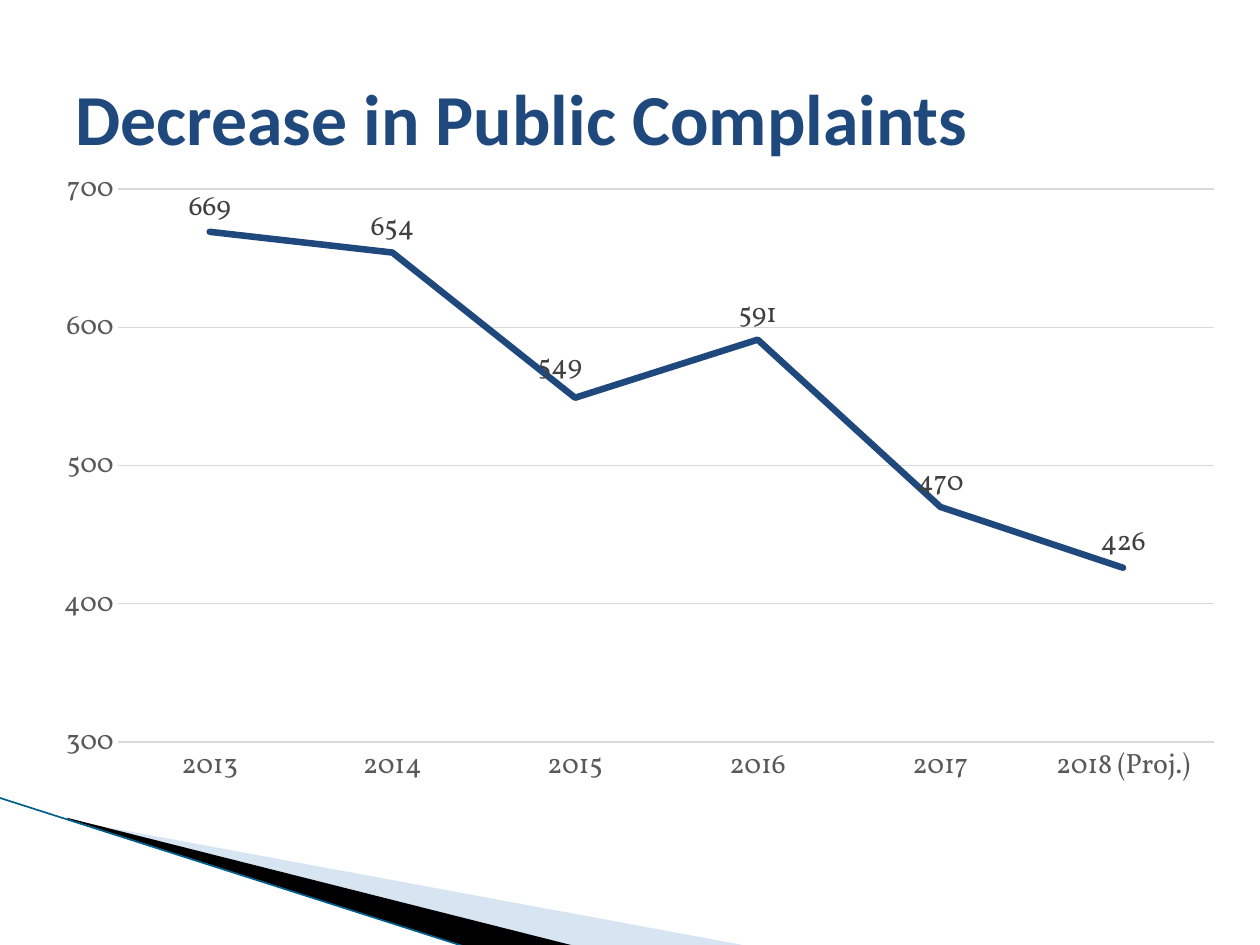
import dataclasses

import lxml.etree
import pptx
import pptx.chart.data
import pptx.dml.color
import pptx.enum.chart
import pptx.enum.shapes
import pptx.enum.text
import pptx.oxml
import pptx.oxml.ns
import pptx.util

Inches = pptx.util.Inches
Pt = pptx.util.Pt
qn = pptx.oxml.ns.qn


@dataclasses.dataclass(frozen=True)
class Theme:
    """Colours, fonts and type sizes of the slide."""
    navy: str = "1F497D"
    pale: str = "9DBDDE"
    black: str = "000000"
    edge: str = "005F8C"
    grid: str = "D9D9D9"
    axis: str = "595959"
    label: str = "404040"
    title_font: str = "Calibri"
    chart_font: str = "Vollkorn"
    title_size: float = 41
    chart_size: float = 16


THEME = Theme()


def rgb(value):
    """Return a colour object for a hex string."""
    return pptx.dml.color.RGBColor.from_string(value)


def style_font(font, name, size, color, bold=False):
    """Set the face, size, colour and weight of a font."""
    font.name, font.size, font.bold = name, Pt(size), bold
    font.color.rgb = rgb(color)


def style_line(line, color, width):
    """Set the colour and width of a line."""
    line.color.rgb = rgb(color)
    line.width = Pt(width)


def add_layout(parent, index, target=None, **parts):
    """Insert a manual chart layout made of fractions of the chart."""
    for old in parent.findall(qn("c:layout")):
        parent.remove(old)
    layout = lxml.etree.Element(qn("c:layout"))
    manual = lxml.etree.SubElement(layout, qn("c:manualLayout"))
    if target:
        lxml.etree.SubElement(manual, qn("c:layoutTarget")).set("val", target)
        for mode in ("xMode", "yMode"):
            lxml.etree.SubElement(manual, qn("c:" + mode)).set("val", "edge")
    for key, value in parts.items():
        lxml.etree.SubElement(manual, qn("c:" + key)).set("val", str(value))
    parent.insert(index, layout)


def add_wedge(s, left, top, points, color, alpha=None):
    """Draw a filled polygon whose points are relative to left and top."""
    pts = [(Inches(left + x), Inches(top + y)) for x, y in points]
    builder = s.shapes.build_freeform(*pts[0])
    builder.add_line_segments(pts[1:], close=True)
    sp = builder.convert_to_shape()
    sp.shadow.inherit = False
    sp.fill.solid()
    sp.fill.fore_color.rgb = rgb(color)
    sp.line.fill.background()
    if alpha is not None:
        clr = sp.fill._xPr.find(".//" + qn("a:srgbClr"))
        lxml.etree.SubElement(clr, qn("a:alpha")).set("val", str(alpha * 1000))


def add_corner(s, left, top, width, height):
    """Draw the wedges and edge line in the bottom left corner."""
    add_wedge(s, left + 0.56, top + 0.17,
              [(0, 0.01), (5.4, 1.01), (4.01, 1.01), (0, 0)], THEME.pale, 40)
    add_wedge(s, left + 0.54, top + 0.16,
              [(0, 0), (4.04, 1.02), (3.19, 1.03), (0.01, 0.01)], THEME.black)
    cx = s.shapes.add_connector(
        pptx.enum.shapes.MSO_CONNECTOR.STRAIGHT, Inches(left), Inches(top),
        Inches(left + width), Inches(top + height))
    style_line(cx.line, THEME.edge, 0.95)
    lxml.etree.SubElement(cx._element.spPr, qn("a:effectLst"))


def add_title(s, left, top, width, height, text):
    """Place the slide title, centred vertically in its box."""
    tf = s.shapes.add_textbox(*map(Inches, (left, top, width, height))).text_frame
    tf.word_wrap = True
    tf.vertical_anchor = pptx.enum.text.MSO_ANCHOR.MIDDLE
    r = tf.paragraphs[0].add_run()
    r.text = text
    style_font(r.font, THEME.title_font, THEME.title_size, THEME.navy, True)


def style_axes(chart):
    """Set scale, gridlines and type on both axes."""
    for axis in (chart.category_axis, chart.value_axis):
        axis.major_tick_mark = pptx.enum.chart.XL_TICK_MARK.NONE
        axis.minor_tick_mark = pptx.enum.chart.XL_TICK_MARK.NONE
        style_font(axis.tick_labels.font, THEME.chart_font, THEME.chart_size, THEME.axis)
    style_line(chart.category_axis.format.line, THEME.grid, 0.75)
    axis = chart.value_axis
    axis.minimum_scale, axis.maximum_scale, axis.major_unit = 300, 700, 100
    axis.format.line.fill.background()
    axis.has_major_gridlines = True
    style_line(axis.major_gridlines.format.line, THEME.grid, 0.75)


def add_complaints_chart(s, left, top, width, height):
    """Place the line chart of complaints by year."""
    data = pptx.chart.data.CategoryChartData()
    data.categories = ["2013", "2014", "2015", "2016", "2017", "2018 (Proj.)"]
    data.add_series("Series 1", [669, 654, 549, 591, 470, 426])
    chart = s.shapes.add_chart(
        pptx.enum.chart.XL_CHART_TYPE.LINE,
        *map(Inches, (left, top, width, height)), data).chart
    chart.has_legend = chart.has_title = False
    style_font(chart.font, THEME.chart_font, 10, THEME.black)
    style_axes(chart)
    add_layout(chart._chartSpace.chart.plotArea, 0, "inner",
               x=0.63 / width, y=0.25 / height, w=8.7 / width, h=4.39 / height)

    plot = chart.plots[0]
    plot.vary_by_categories = False
    series = plot.series[0]
    series.smooth = False
    series.marker.style = pptx.enum.chart.XL_MARKER_STYLE.NONE
    style_line(series.format.line, THEME.navy, 3.75)
    series._element.spPr.find(qn("a:ln")).set("cap", "rnd")

    above = pptx.enum.chart.XL_LABEL_POSITION.ABOVE
    labels = series.data_labels
    labels.show_value = True
    labels.position = above
    style_font(labels.font, THEME.chart_font, THEME.chart_size, THEME.label)
    shifted = series.points[2].data_label
    shifted.position = above
    style_font(shifted.font, THEME.chart_font, THEME.chart_size, THEME.label)
    add_layout(labels._element.find(qn("c:dLbl")), 1, x=-0.12 / width, y=-0.05 / height)


def main():
    """Build the slide and save it."""
    prs = pptx.Presentation()
    prs.slide_width, prs.slide_height = Inches(10), Inches(7.5)
    s = prs.slides.add_slide(prs.slide_layouts[6])
    add_corner(s, -0.01, 6.33, 3.72, 1.19)
    add_title(s, 0.5, 0.3, 9, 1.25, "Decrease in Public Complaints")
    add_complaints_chart(s, 0.31, 1.25, 9.52, 5.08)
    prs.save("out.pptx")


if __name__ == "__main__":
    main()
